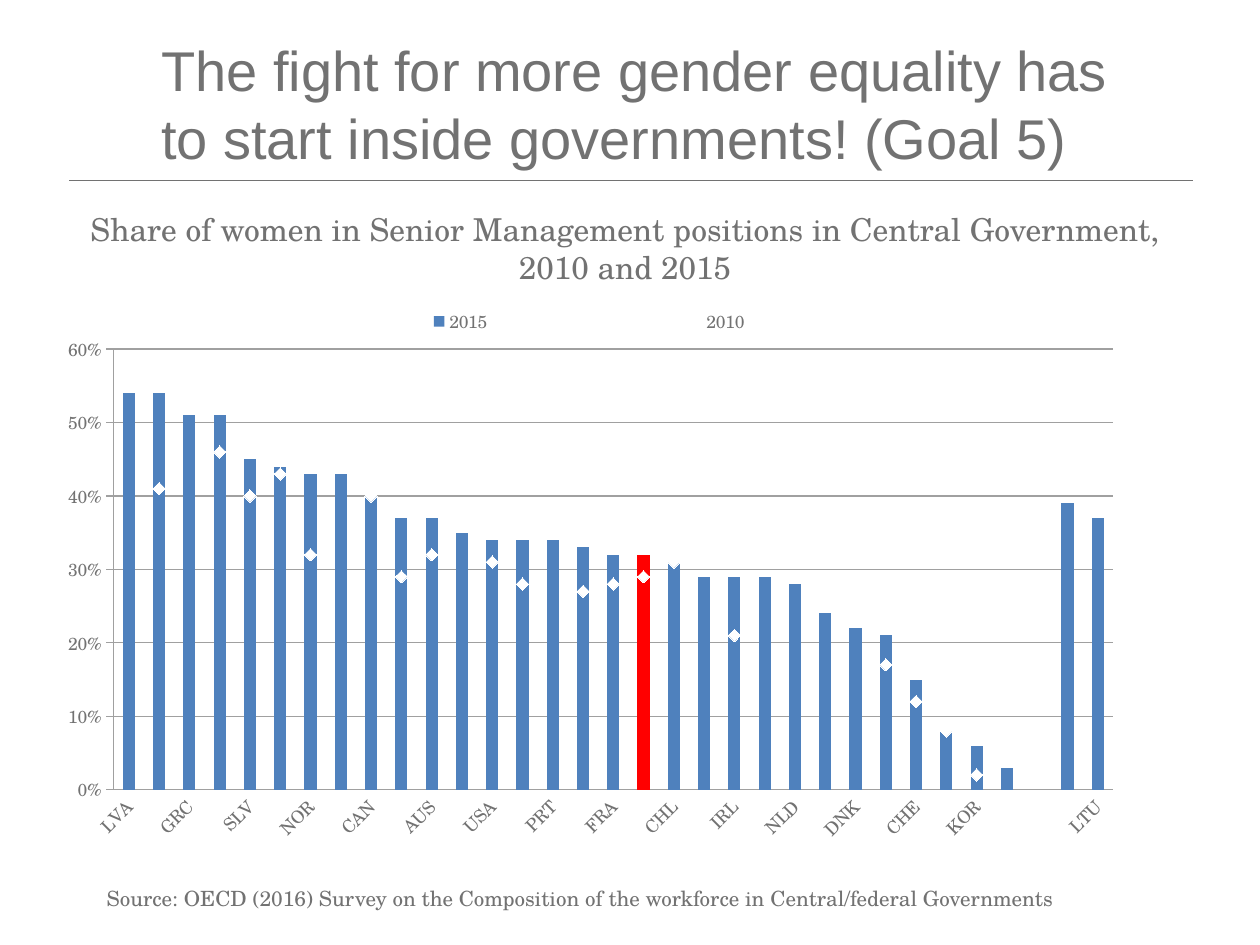
from lxml import etree
from pptx import Presentation
from pptx import util as u
from pptx.chart.data import CategoryChartData
from pptx.dml.color import RGBColor
from pptx.enum import chart as ch, shapes, text
from pptx.oxml import parse_xml
from pptx.oxml.ns import nsdecls, qn

GREY, GRID, BLUE, RED, WHITE = "727272", "A0A0A0", "4F81BD", "FF0000", "FFFFFF"
SERIF = "TeX Gyre Schola"


def color(hex_code):
    return RGBColor.from_string(hex_code)


def add_text(left, top, width, height, wording, size, font_name, align, anchor):
    frame = slide.shapes.add_textbox(u.Cm(left), u.Cm(top), u.Cm(width), u.Cm(height)).text_frame
    frame.word_wrap = True
    frame.vertical_anchor = anchor
    frame.text = wording
    paragraph = frame.paragraphs[0]
    paragraph.alignment = align
    font = paragraph.runs[0].font
    font.name, font.size, font.color.rgb = font_name, u.Pt(size), color(GREY)


prs = Presentation()
prs.slide_width, prs.slide_height = u.Cm(25.4), u.Cm(19.05)
slide = prs.slides.add_slide(prs.slide_layouts[6])

# Heading and rule
rule = slide.shapes.add_connector(
    shapes.MSO_CONNECTOR.STRAIGHT, u.Cm(1.4), u.Cm(3.63), u.Cm(24.05), u.Cm(3.63))
rule.line.color.rgb = color(GREY)
rule.line.width = u.Pt(0.5)
etree.SubElement(rule._element.spPr, qn("a:effectLst"))

LEFT, CENTER = text.PP_ALIGN.LEFT, text.PP_ALIGN.CENTER
TOP, MIDDLE = text.MSO_ANCHOR.TOP, text.MSO_ANCHOR.MIDDLE
add_text(3, 0.66, 20.6, 2.84,
         "The fight for more gender equality has to start inside governments! (Goal 5)",
         32, "Arial", LEFT, MIDDLE)

# Share of women by country: (2015, 2010)
shares = [
    ("LVA", 0.54, None), ("ISL", 0.54, 0.41), ("GRC", 0.51, None), ("POL", 0.51, 0.46),
    ("SLV", 0.45, 0.40), ("SWE", 0.44, 0.43), ("NOR", 0.43, 0.32), ("ISR", 0.43, None),
    ("CAN", 0.40, 0.40), ("GBR", 0.37, 0.29), ("AUS", 0.37, 0.32), ("SVK", 0.35, None),
    ("USA", 0.34, 0.31), ("FIN", 0.34, 0.28), ("PRT", 0.34, 0.37), ("ITA", 0.33, 0.27),
    ("FRA", 0.32, 0.28), ("OECD", 0.32, 0.29), ("CHL", 0.31, 0.31), ("ESP", 0.29, 0.33),
    ("IRL", 0.29, 0.21), ("AUT", 0.29, None), ("NLD", 0.28, None), ("MEX", 0.24, None),
    ("DNK", 0.22, 0.25), ("BEL", 0.21, 0.17), ("CHE", 0.15, 0.12), ("TUR", 0.08, 0.08),
    ("KOR", 0.06, 0.02), ("JPN", 0.03, None), ("", None, None), ("COL", 0.39, None),
    ("LTU", 0.37, None),
]
countries, shares_2015, shares_2010 = zip(*shares)
data = CategoryChartData(number_format="0%")
data.categories = countries
data.add_series("2015", shares_2015)
data.add_series("2010", shares_2010)
chart = slide.shapes.add_chart(
    ch.XL_CHART_TYPE.COLUMN_CLUSTERED, u.Cm(1.3), u.Cm(5.92), u.Cm(21.59), u.Cm(11.2), data).chart
chart.has_title = False
chart.font.name, chart.font.size, chart.font.color.rgb = SERIF, u.Pt(10), color(GREY)

# Move 2010 from the columns to a line chart on the same axes
columns = chart.plots[0]
columns.gap_width = 150
columns.vary_by_categories = False
column_xml = columns._element
line_xml = parse_xml(
    f'<c:lineChart {nsdecls("c")}><c:grouping val="standard"/><c:varyColors val="0"/>'
    '<c:marker val="1"/></c:lineChart>')
series_xml = column_xml.findall(qn("c:ser"))[1]
for bar_only in series_xml.findall(qn("c:invertIfNegative")):
    series_xml.remove(bar_only)
line_xml.insert(2, series_xml)
for axis_id in column_xml.findall(qn("c:axId")):
    etree.SubElement(line_xml, qn("c:axId"), val=axis_id.get("val"))
column_xml.addnext(line_xml)

bars = columns.series[0]
oecd_bar = bars.points[countries.index("OECD")]
for part, fill_color in ((bars, BLUE), (oecd_bar, RED)):
    part.format.fill.solid()
    part.format.fill.fore_color.rgb = color(fill_color)

diamonds = chart.plots[1].series[0]
diamonds.smooth = False
diamonds.format.line.fill.background()
diamonds.marker.style = ch.XL_MARKER_STYLE.DIAMOND
diamonds.marker.size = 7
diamonds.marker.format.fill.solid()
diamonds.marker.format.fill.fore_color.rgb = color(WHITE)
diamonds.marker.format.line.fill.background()

# Axes
country_axis, share_axis = chart.category_axis, chart.value_axis
country_axis.major_tick_mark = ch.XL_TICK_MARK.NONE
country_axis.tick_labels.font.size = u.Pt(10)
country_axis._element.find(qn("c:txPr")).find(qn("a:bodyPr")).set("rot", "-2700000")
share_axis.minimum_scale, share_axis.maximum_scale, share_axis.major_unit = 0, 0.6, 0.1
share_axis.major_tick_mark = ch.XL_TICK_MARK.OUTSIDE
share_axis.tick_labels.number_format = "0%"
share_axis.tick_labels.number_format_is_linked = False
for part in (country_axis, share_axis, share_axis.major_gridlines):
    part.format.line.color.rgb = color(GRID)
    part.format.line.width = u.Pt(0.75)

# Legend and plot area positions, as fractions of the chart
chart.has_legend = True
chart.legend.position = ch.XL_LEGEND_POSITION.TOP
chart.legend.include_in_layout = False
plot_area = column_xml.getparent()
for part, target, box in (
        (plot_area, '<c:layoutTarget val="inner"/>', (0.046, 0.1, 0.933, 0.793)),
        (chart.legend._element, "", (0.16, 0.02, 0.66, 0.06))):
    for old in part.findall(qn("c:layout")):
        part.remove(old)
    sizes = "".join(f'<c:{side} val="{value}"/>' for side, value in zip("xywh", box))
    layout = parse_xml(
        f'<c:layout {nsdecls("c")}><c:manualLayout>{target}<c:xMode val="edge"/>'
        f'<c:yMode val="edge"/>{sizes}</c:manualLayout></c:layout>')
    part.insert(0 if part is plot_area else 1, layout)

# Chart heading and source
add_text(1.5, 4.11, 22.2, 1.8,
         "Share of women in Senior Management positions in Central Government, 2010 and 2015",
         18, SERIF, CENTER, TOP)
add_text(1.9, 17.73, 20.19, 0.76,
         "Source: OECD (2016) Survey on the Composition of the workforce in Central/federal Governments",
         12, SERIF, LEFT, TOP)

prs.save("out.pptx")
